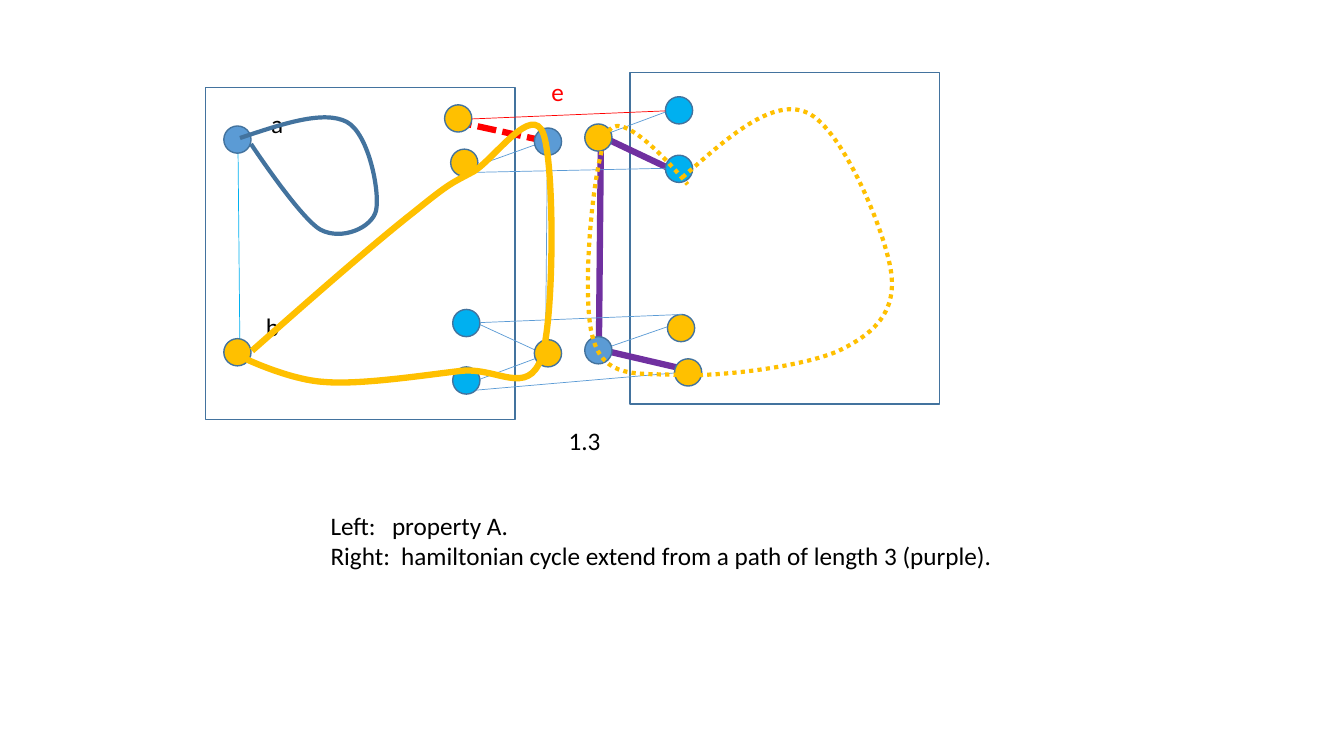
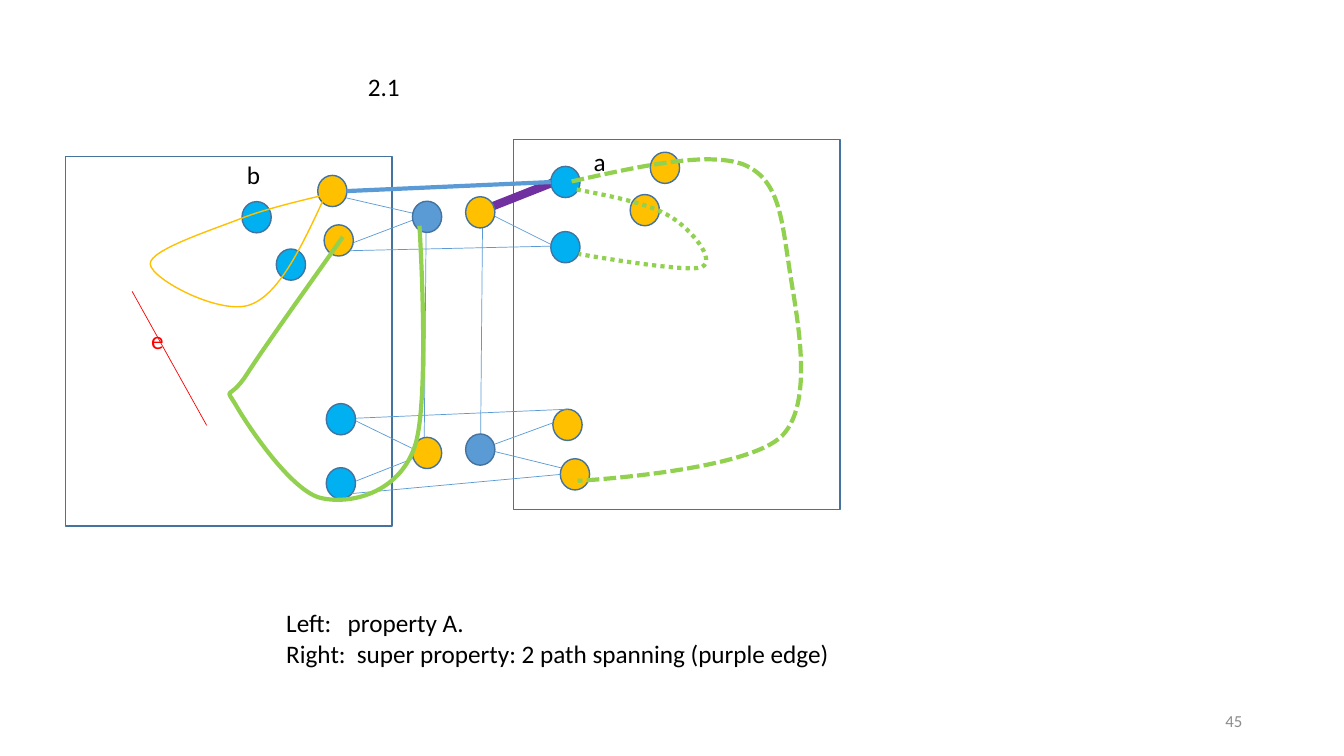
from dataclasses import dataclass

from lxml import etree
from pptx import Presentation
from pptx import util as u
from pptx.dml.color import RGBColor
from pptx.enum import dml, shapes, text
from pptx.oxml.ns import qn

BLUE = RGBColor(0x5B, 0x9B, 0xD5)
NAVY = RGBColor(0x43, 0x73, 0x9E)
SKY = RGBColor(0x00, 0xB0, 0xF0)
GOLD = RGBColor(0xFF, 0xC0, 0x00)
RED = RGBColor(0xFF, 0x00, 0x00)
PURPLE = RGBColor(0x70, 0x30, 0xA0)
GREEN = RGBColor(0x92, 0xD0, 0x50)
BLACK = RGBColor(0x00, 0x00, 0x00)
GRAY = RGBColor(0x8C, 0x8C, 0x8C)
FONT = "Calibri"
DOT = dml.MSO_LINE.ROUND_DOT
DASH = dml.MSO_LINE.SQUARE_DOT
STEPS = 24
STOPS = (0.61, 0.7)

BOXES = [(2.04, 0.87), (6.25, 0.72)]
BOX = (3.07, 3.29)
EDGES = {
    "left side": (5.43, 1.4, 5.41, 3.52),
    "left top": (5.41, 1.4, 4.54, 1.21),
    "left upper": (5.41, 1.4, 4.63, 1.68),
    "left lower": (5.41, 3.52, 4.63, 3.16),
    "left base": (5.41, 3.52, 4.74, 3.77),
    "right side": (5.94, 3.47, 5.96, 1.35),
    "right base": (5.96, 3.47, 6.82, 3.67),
    "right lower": (5.96, 3.47, 6.74, 3.2),
    "right upper": (5.96, 1.35, 6.74, 1.72),
    "right top": (5.96, 1.35, 6.63, 1.1),
}
LINKS = {
    "link top": (4.68, 1.18, 6.6, 1.1),
    "link upper": (4.71, 1.71, 6.6, 1.67),
    "link lower": (4.77, 3.2, 6.76, 3.12),
    "link base": (4.73, 3.87, 6.69, 3.7),
}
NODES = [
    (5.3, 1.27, BLUE), (5.3, 3.37, GOLD), (4.49, 3.64, SKY),
    (4.49, 3.07, SKY), (4.47, 1.48, GOLD), (4.41, 1.04, GOLD),
    (5.8, 3.34, BLUE), (5.8, 1.23, GOLD), (6.6, 0.96, SKY),
    (6.6, 1.54, SKY), (6.62, 3.12, GOLD), (6.69, 3.56, GOLD),
]


@dataclass
class Frame:
    left: float
    top: float
    width: float
    height: float
    node: tuple

    def place(self, x, y):
        return (self.left + (x - BOXES[0][0]) * self.width / BOX[0],
                self.top + (y - BOXES[0][1]) * self.height / BOX[1])


def stroke(shape, color, width, dash=None):
    shape.line.color.rgb = color
    shape.line.width = u.Pt(width)
    if dash is not None:
        shape.line.dash_style = dash


def solid(slide, kind, left, top, size, fill=None):
    shape = slide.shapes.add_shape(
        kind, *(u.Inches(v) for v in (left, top, *size)))
    shape.shadow.inherit = False
    if fill is None:
        shape.fill.background()
    else:
        shape.fill.solid()
        shape.fill.fore_color.rgb = fill
    stroke(shape, NAVY, 1)


def node(slide, left, top, size, fill):
    solid(slide, shapes.MSO_SHAPE.OVAL, left, top, size, fill)


def edge(slide, ends, color=BLUE, width=0.5, dash=None):
    line = slide.shapes.add_connector(
        shapes.MSO_CONNECTOR.STRAIGHT, *(u.Inches(v) for v in ends))
    etree.SubElement(line._element.spPr, qn("a:effectLst"))
    stroke(line, color, width, dash)


def trace(points):
    for i in range(0, len(points) - 1, 3):
        a, b, c, d = points[i:i + 4]
        for step in range(1, STEPS + 1):
            t = step / STEPS
            s = 1 - t
            yield tuple(
                u.Inches(s**3 * p + 3 * s * s * t * q + 3 * s * t * t * r + t**3 * w)
                for p, q, r, w in zip(a, b, c, d))


def bend(shape, points):
    route = next(shape._element.iter(qn("a:path")))
    for line in route.findall(qn("a:lnTo")):
        route.remove(line)
    for i in range(1, len(points), 3):
        cubic = etree.SubElement(route, qn("a:cubicBezTo"))
        for x, y in points[i:i + 3]:
            etree.SubElement(cubic, qn("a:pt"),
                             x=str(u.Inches(x) - shape.left),
                             y=str(u.Inches(y) - shape.top))


def curve(slide, points, color, width, dash=None):
    start = (u.Inches(v) for v in points[0])
    pen = slide.shapes.build_freeform(*start, scale=1.0)
    pen.add_line_segments(trace(points), close=False)
    shape = pen.convert_to_shape()
    bend(shape, points)
    shape.shadow.inherit = False
    shape.fill.background()
    stroke(shape, color, width, dash)


def write(slide, lines, left, top, width=1.14, height=0.75, size=18, color=BLACK,
          align=None, anchor=text.MSO_ANCHOR.TOP, stops=(), wrap=True):
    box = slide.shapes.add_textbox(
        *(u.Inches(v) for v in (left, top, width, height)))
    frame = box.text_frame
    frame.word_wrap = wrap
    frame.vertical_anchor = anchor
    frame.text = lines
    for par in frame.paragraphs:
        par.alignment = align
        for run in par.runs:
            run.font.name = FONT
            run.font.size = u.Pt(size)
            run.font.color.rgb = color
    for par, stop in zip(frame.paragraphs, stops):
        tabs = etree.SubElement(par._p.get_or_add_pPr(), qn("a:tabLst"))
        etree.SubElement(tabs, qn("a:tab"), pos=str(u.Inches(stop)), algn="l")


def graph(slide, frame, styles):
    for corner in BOXES:
        solid(slide, shapes.MSO_SHAPE.RECTANGLE, *frame.place(*corner),
              (frame.width, frame.height))

    def join(group):
        for name, (x1, y1, x2, y2) in group.items():
            ends = frame.place(x1, y1) + frame.place(x2, y2)
            edge(slide, ends, *styles.get(name, ()))

    join(EDGES)
    for x, y, fill in NODES:
        node(slide, *frame.place(x, y), frame.node, fill)
    join(LINKS)


def caption(slide, right, left, top):
    write(slide, "Left:\tproperty A.\nRight:\t" + right, left, top,
          width=6.89, height=0.71, stops=STOPS)


def cycle(slide):
    frame = Frame(2.04, 0.87, *BOX, (0.27, 0.27))
    path3 = (PURPLE, 4.5)
    graph(slide, frame, {
        "left top": (RED, 4.5, DASH), "link top": (RED, 0.5),
        "right side": path3, "right base": path3, "right upper": path3,
    })
    edge(slide, (2.36, 1.39, 2.38, 3.51), SKY)
    for top, fill in ((1.25, BLUE), (3.36, GOLD)):
        node(slide, 2.22, top, frame.node, fill)
    write(slide, "a", 2.59, 1.03)
    write(slide, "b", 2.54, 3.04)
    write(slide, "e", 5.37, 0.71, width=0.61, color=RED)
    curve(slide, [
        (2.38, 1.37), (2.8, 1.23), (3.21, 1.09), (3.44, 1.21),
        (3.66, 1.33), (3.77, 1.91), (3.73, 2.09),
        (3.69, 2.26), (3.39, 2.39), (3.18, 2.28),
        (2.98, 2.17), (2.49, 1.43), (2.49, 1.43)], NAVY, 3)
    curve(slide, [
        (2.5, 3.48), (3.12, 2.93), (3.74, 2.39), (4.11, 2.1),
        (4.48, 1.8), (4.48, 1.82), (4.7, 1.7),
        (4.91, 1.57), (5.28, 1.02), (5.39, 1.33),
        (5.5, 1.64), (5.5, 3.16), (5.37, 3.55),
        (5.23, 3.94), (4.93, 3.64), (4.57, 3.68),
        (4.22, 3.72), (3.58, 3.82), (3.22, 3.79),
        (2.86, 3.77), (2.39, 3.54), (2.39, 3.54)], GOLD, 4.5)
    curve(slide, [
        (6.77, 1.76), (7.22, 1.36), (7.67, 0.96), (8.01, 1.12),
        (8.36, 1.28), (8.79, 2.32), (8.84, 2.71),
        (8.89, 3.1), (8.67, 3.31), (8.32, 3.48),
        (7.96, 3.64), (7.13, 3.74), (6.72, 3.72),
        (6.31, 3.7), (5.99, 3.76), (5.88, 3.35),
        (5.76, 2.95), (5.88, 1.56), (6.04, 1.3),
        (6.19, 1.05), (6.82, 1.83), (6.82, 1.83)], GOLD, 3, DOT)
    caption(slide, "hamiltonian cycle extend from a path of length 3 (purple).",
            3.18, 5.01)
    write(slide, "1.3", 5.54, 4.17, width=0.52, height=0.4, wrap=False)


def span(slide):
    frame = Frame(0.65, 1.55, 3.24, 3.67, (0.29, 0.31))
    graph(slide, frame, {"right top": (PURPLE, 6), "link top": (BLUE, 3)})
    write(slide, "a", 5.79, 1.4, width=1.2, height=0.84)
    write(slide, "b", 2.35, 1.53, width=1.2, height=0.84)
    for left, top, fill in ((2.74, 2.47, SKY), (2.4, 2, SKY),
                            (6.25, 1.93, GOLD), (6.45, 1.51, GOLD)):
        node(slide, left, top, frame.node, fill)
    edge(slide, (1.31, 2.89, 2.05, 4.22), RED)
    write(slide, "e", 1.4, 3.17, width=0.64, height=0.84, color=RED)
    curve(slide, [
        (3.24, 1.91), (3.01, 2.41), (2.78, 2.91), (2.49, 3.02),
        (2.2, 3.14), (1.5, 2.77), (1.49, 2.62),
        (1.48, 2.48), (2.11, 2.28), (2.41, 2.16),
        (2.72, 2.04), (3.33, 1.91), (3.33, 1.91)], GOLD, 1)
    curve(slide, [
        (3.4, 2.35), (3.02, 2.89), (2.63, 3.43), (2.45, 3.71),
        (2.27, 3.99), (2.22, 3.82), (2.34, 4.02),
        (2.46, 4.23), (2.89, 4.87), (3.18, 4.94),
        (3.48, 5.01), (3.95, 4.89), (4.11, 4.44),
        (4.27, 3.99), (4.16, 2.24), (4.16, 2.24)], GREEN, 3)
    curve(slide, [
        (5.72, 1.88), (6.08, 1.95), (6.44, 2.02), (6.65, 2.15),
        (6.85, 2.27), (7.11, 2.58), (6.96, 2.65),
        (6.81, 2.71), (5.74, 2.52), (5.74, 2.52)], GREEN, 3, DOT)
    curve(slide, [
        (5.67, 1.8), (6.34, 1.65), (7.01, 1.5), (7.37, 1.63),
        (7.72, 1.77), (7.75, 2.15), (7.82, 2.6),
        (7.88, 3.04), (8.1, 3.96), (7.76, 4.32),
        (7.41, 4.68), (5.73, 4.77), (5.73, 4.77)], GREEN, 3, DASH)
    caption(slide, "super property: 2 path spanning (purple edge)", 2.74, 5.98)
    write(slide, "2.1", 3.55, 0.66, width=2.6, height=0.4)
    write(slide, "45", 9.42, 6.95, width=3, height=0.4, size=12, color=GRAY,
          align=text.PP_ALIGN.RIGHT, anchor=text.MSO_ANCHOR.MIDDLE)


def main():
    deck = Presentation()
    deck.slide_width = u.Inches(13.33)
    deck.slide_height = u.Inches(7.5)
    for draw in (cycle, span):
        draw(deck.slides.add_slide(deck.slide_layouts[6]))
    deck.save("out.pptx")


if __name__ == "__main__":
    main()
